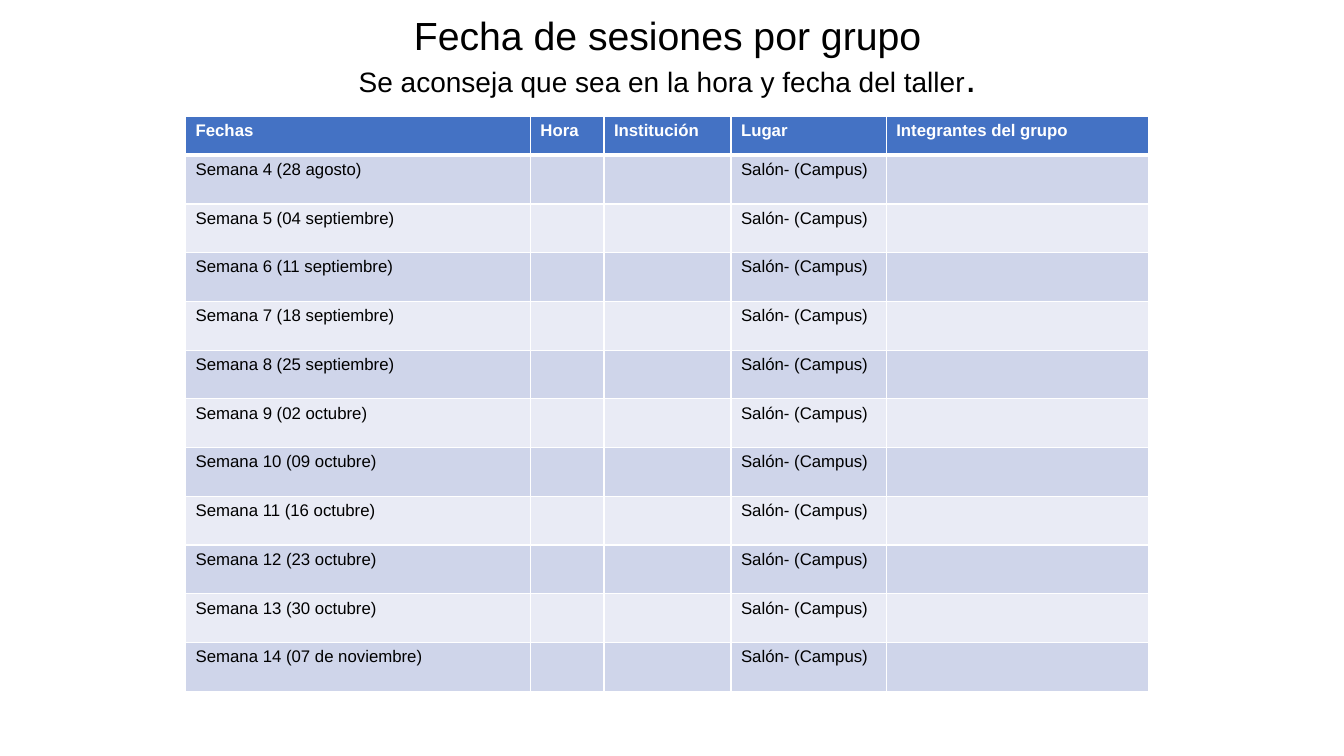
import dataclasses

import pptx
import pptx.dml.color
import pptx.enum.text
import pptx.oxml
import pptx.oxml.ns
import pptx.presentation
import pptx.slide
import pptx.table
import pptx.text.text
import pptx.util

Inches = pptx.util.Inches
Pt = pptx.util.Pt

FONT = "Arial"
BLACK, WHITE = "000000", "FFFFFF"
HEADER_FILL = "4472C4"
BAND_FILLS = ("CFD5EA", "E9EBF5")
HEADER_HEIGHT, TABLE_HEIGHT = 0.39, 5.71
PLACE = "Salón- (Campus)"


@dataclasses.dataclass(frozen=True)
class Column:
    heading: str
    width: float


@dataclasses.dataclass(frozen=True)
class Session:
    week: int
    date: str


COLUMNS = (
    Column("Fechas", 3.42),
    Column("Hora", 0.73),
    Column("Institución", 1.26),
    Column("Lugar", 1.54),
    Column("Integrantes del grupo", 2.6),
)
DATES = (
    "28 agosto", "04 septiembre", "11 septiembre", "18 septiembre",
    "25 septiembre", "02 octubre", "09 octubre", "16 octubre",
    "23 octubre", "30 octubre", "07 de noviembre",
)
SESSIONS = [Session(week, date) for week, date in enumerate(DATES, start=4)]


def rgb(color: str) -> pptx.dml.color.RGBColor:
    return pptx.dml.color.RGBColor.from_string(color)


def set_font(font: pptx.text.text.Font, size: float, color: str, bold: bool = False) -> None:
    font.name = FONT
    font.size = Pt(size)
    font.bold = bold
    font.color.rgb = rgb(color)


def set_borders(cell: pptx.table._Cell, bottom: float) -> None:
    """Give the cell white edges, with its own width in points at the bottom."""
    properties = cell._tc.get_or_add_tcPr()
    for side, width in (("L", 1), ("R", 1), ("T", 1), ("B", bottom)):
        properties.append(pptx.oxml.parse_xml(
            f'<a:ln{side} {pptx.oxml.ns.nsdecls("a")} w="{Pt(width)}">'
            f'<a:solidFill><a:srgbClr val="{WHITE}"/></a:solidFill></a:ln{side}>'
        ))


def fill_row(table: pptx.table.Table, index: int, texts: list[str], fill: str,
             color: str, bold: bool = False, bottom: float = 1) -> None:
    for cell, text in zip(table.rows[index].cells, texts):
        cell.text = text
        set_font(cell.text_frame.paragraphs[0].font, 12, color, bold)
        set_borders(cell, bottom)
        cell.fill.solid()
        cell.fill.fore_color.rgb = rgb(fill)


def add_heading(slide: pptx.slide.Slide) -> None:
    title = slide.shapes.title
    title.left, title.top = Inches(0.39), Inches(0)
    title.width, title.height = Inches(12.46), Inches(1.17)
    frame = title.text_frame
    frame.word_wrap = True
    frame.auto_size = pptx.enum.text.MSO_AUTO_SIZE.NONE
    frame.vertical_anchor = pptx.enum.text.MSO_ANCHOR.MIDDLE
    heading = frame.paragraphs[0]
    heading.alignment = pptx.enum.text.PP_ALIGN.CENTER
    heading.line_spacing = 0.9
    for text, size in (
        ("Fecha de sesiones por grupo", 28),
        ("Se aconseja que sea en la hora y fecha del taller", 20),
        (".", 28),
    ):
        if heading.runs and size == 20:
            heading.add_line_break()
        run = heading.add_run()
        run.text = text
        set_font(run.font, size, BLACK)


def add_schedule(slide: pptx.slide.Slide) -> None:
    table = slide.shapes.add_table(
        len(SESSIONS) + 1, len(COLUMNS),
        Inches(1.84), Inches(1.15), Inches(9.56), Inches(TABLE_HEIGHT),
    ).table
    for table_column, column in zip(table.columns, COLUMNS):
        table_column.width = Inches(column.width)
    session_height = (TABLE_HEIGHT - HEADER_HEIGHT) / len(SESSIONS)
    for index, row in enumerate(table.rows):
        row.height = Inches(session_height if index else HEADER_HEIGHT)

    headings = [column.heading for column in COLUMNS]
    fill_row(table, 0, headings, HEADER_FILL, WHITE, bold=True, bottom=3)
    for index, session in enumerate(SESSIONS):
        texts = [f"Semana {session.week} ({session.date})", "", "", PLACE, ""]
        fill_row(table, index + 1, texts, BAND_FILLS[index % 2], BLACK)


def main() -> None:
    presentation = pptx.Presentation()
    presentation.slide_width = Inches(13.33)
    presentation.slide_height = Inches(7.5)
    slide = presentation.slides.add_slide(presentation.slide_layouts[5])
    add_heading(slide)
    add_schedule(slide)
    presentation.save("out.pptx")


if __name__ == "__main__":
    main()
